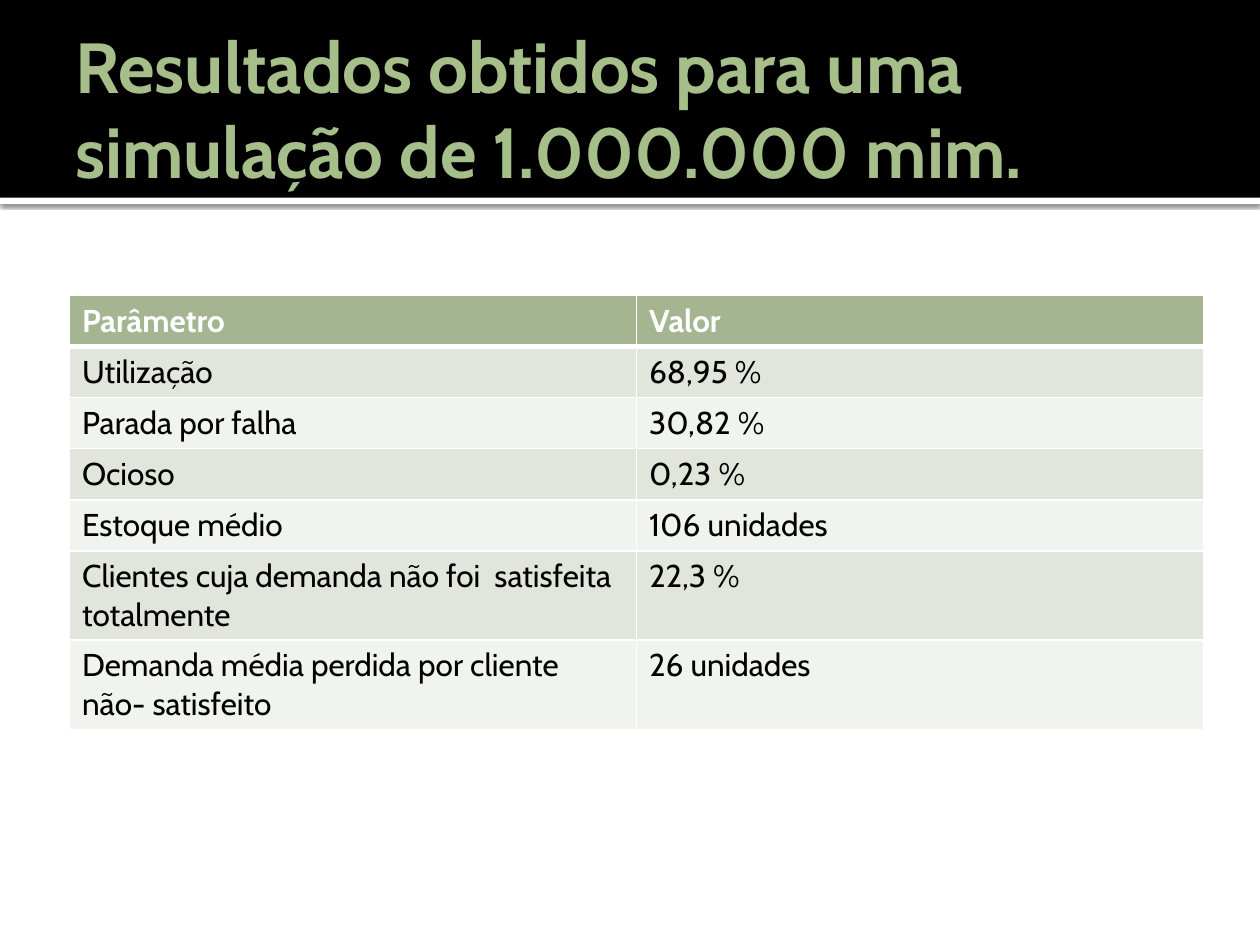
from typing import NamedTuple

from lxml.etree import SubElement as Sub
from pptx import Presentation
from pptx.dml.color import RGBColor as Rgb
from pptx.enum.shapes import MSO_SHAPE as Kind
from pptx.enum.text import MSO_ANCHOR as Anchor
from pptx.oxml.ns import qn
from pptx.util import Pt

FONT = "Cabin"
HEX = {
    "white": "FFFFFF", "black": "000000", "title": "A6BE89",
    "head": "A5B592", "odd": "E1E5DC", "even": "F0F3EE",
}


class Band(NamedTuple):
    top: float
    high: float
    fill: str
    shade: bool


class Row(NamedTuple):
    name: str
    value: str
    high: float = 29.2


BANDS = [Band(113, 3.6, "white", True), Band(0, 113, "black", False)]
ROWS = [
    Row("Parâmetro", "Valor"),
    Row("Utilização", "68,95 %"),
    Row("Parada por falha", "30,82 %"),
    Row("Ocioso", "0,23 %"),
    Row("Estoque médio", "106 unidades"),
    Row("Clientes cuja demanda não foi  satisfeita totalmente", "22,3 %", 51),
    Row("Demanda média perdida por cliente não- satisfeito", "26 unidades", 51),
]


def write(frame, text: str, *, size: float, color: str, bold: bool = False) -> None:
    run = frame.paragraphs[0].add_run()
    run.text = text
    font = run.font
    font.name, font.size, font.bold = FONT, Pt(size), bold
    font.color.rgb = Rgb.from_string(HEX[color])


def paint(fill, color: str) -> None:
    fill.solid()
    fill.fore_color.rgb = Rgb.from_string(HEX[color])


def tint(node, color: str):
    return Sub(node, qn("a:srgbClr"), val=HEX[color])


def draw_band(slide, band: Band) -> None:
    shape = slide.shapes.add_shape(Kind.RECTANGLE, 0, Pt(band.top), Pt(720), Pt(band.high))
    shape.shadow.inherit = False
    paint(shape.fill, band.fill)
    shape.line.fill.background()
    if band.shade:
        list_ = shape._element.spPr.find(qn("a:effectLst"))
        glow = Sub(list_, qn("a:outerShdw"), blurRad=str(Pt(2.5)), dist=str(Pt(0.8)),
                   dir="5400000", algn="tl", rotWithShape="0")
        Sub(tint(glow, "black"), qn("a:alpha"), val="60000")


def edge(cell, base: float) -> None:
    props = cell._tc.get_or_add_tcPr()
    for side, width in zip("LRTB", (1, 1, 1, base)):
        line = Sub(props, qn(f"a:ln{side}"), w=str(Pt(width)))
        tint(Sub(line, qn("a:solidFill")), "white")


def draw_table(slide, rows: list[Row]) -> None:
    high = sum(row.high for row in rows)
    table = slide.shapes.add_table(len(rows), 2, Pt(39.7), Pt(168.8), Pt(648), Pt(high)).table
    for i, row in enumerate(rows):
        table.rows[i].height = Pt(row.high)
        head = i == 0
        fill = "head" if head else "odd" if i % 2 else "even"
        for j, text in enumerate((row.name, row.value)):
            cell = table.cell(i, j)
            # The header rule is also the first body row's top edge
            edge(cell, 3 if head else 1)
            if i == 1:
                cell._tc.tcPr.find(qn("a:lnT")).set("w", str(Pt(3)))
            paint(cell.fill, fill)
            write(cell.text_frame, text, size=18, bold=head,
                  color="white" if head else "black")


def main() -> None:
    deck = Presentation()
    deck.slide_width, deck.slide_height = Pt(720), Pt(540)
    slide = deck.slides.add_slide(deck.slide_layouts[6])

    # Header bands
    for band in BANDS:
        draw_band(slide, band)

    # Title
    frame = slide.shapes.add_textbox(Pt(36), Pt(12.2), Pt(648), Pt(98.6)).text_frame
    frame.word_wrap = True
    frame.vertical_anchor = Anchor.MIDDLE
    frame.margin_left = Pt(7.2)
    frame.margin_right = frame.margin_top = frame.margin_bottom = Pt(3.6)
    write(frame, "Resultados obtidos para uma simulação de 1.000.000 mim.",
          size=40.5, color="title", bold=True)

    # Results
    draw_table(slide, ROWS)
    deck.save("out.pptx")


if __name__ == "__main__":
    main()
